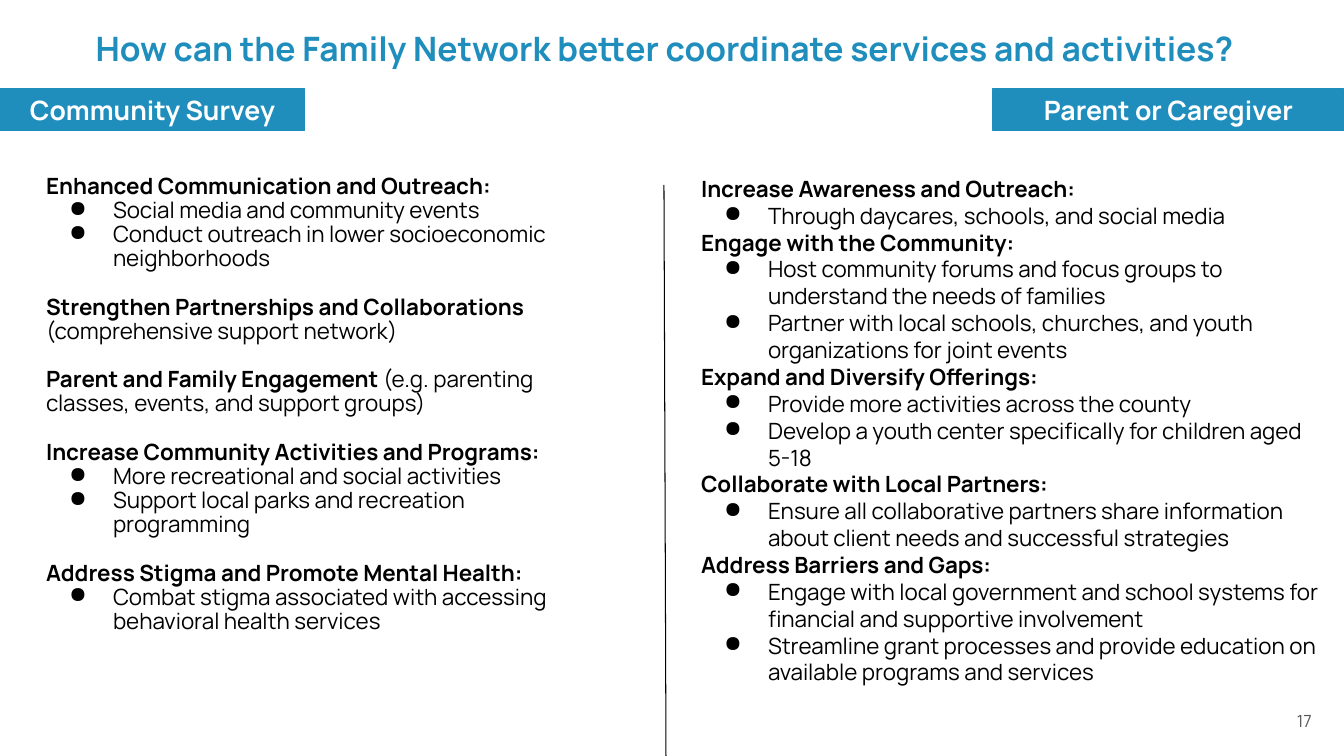
from pptx import Presentation
from pptx.dml.color import RGBColor
from pptx.enum.shapes import MSO_CONNECTOR, MSO_SHAPE
from pptx.enum.text import MSO_ANCHOR as Anchor, MSO_AUTO_SIZE as AutoSize, PP_ALIGN as Align
from pptx.oxml.ns import qn
from pptx.util import Pt
from lxml.etree import SubElement

BLUE = RGBColor(0x1F, 0x8E, 0xBD)
BLACK = RGBColor(0, 0, 0)
WHITE = RGBColor(0xFF, 0xFF, 0xFF)
GREY = RGBColor(0x58, 0x59, 0x59)
FONT = "Manrope"
EMU_PER_PX = 914400 / 100.8
TITLE_ONLY = 5

# Each topic: bold heading, plain text after it, bullets
SURVEY_TOPICS = [
    ("Enhanced Communication and Outreach:", "",
     ["Social media and community events",
      "Conduct outreach in lower socioeconomic neighborhoods"]),
    ("Strengthen Partnerships and Collaborations ", "(comprehensive support network)", []),
    ("Parent and Family Engagement ",
     "(e.g. parenting classes, events, and support groups)", []),
    ("Increase Community Activities and Programs:", "",
     ["More recreational and social activities",
      "Support local parks and recreation programming"]),
    ("Address Stigma and Promote Mental Health:", "",
     ["Combat stigma associated with accessing behavioral health services"]),
]
CAREGIVER_TOPICS = [
    ("Increase Awareness and Outreach:", "",
     ["Through daycares, schools, and social media"]),
    ("Engage with the Community:", "",
     ["Host community forums and focus groups to understand the needs of families",
      "Partner with local schools, churches, and youth organizations for joint events"]),
    ("Expand and Diversify Offerings:", "",
     ["Provide more activities across the county",
      "Develop a youth center specifically for children aged 5-18"]),
    ("Collaborate with Local Partners:", "",
     ["Ensure all collaborative partners share information about client needs"
      " and successful strategies"]),
    ("Address Barriers and Gaps:", "",
     ["Engage with local government and school systems for financial"
      " and supportive involvement",
      "Streamline grant processes and provide education on available programs"
      " and services"]),
]


def px(length):
    return round(length * EMU_PER_PX)


def set_frame(frame, side, top, anchor=Anchor.TOP):
    """Set the wrapping, anchor and insets of a text frame."""
    frame.word_wrap = True
    frame.auto_size = AutoSize.NONE
    frame.vertical_anchor = anchor
    frame.margin_left = frame.margin_right = px(side)
    frame.margin_top = frame.margin_bottom = px(top)


def add_span(para, text, size=16, color=BLACK, bold=False, align=None):
    span = para.add_run()
    span.text = text
    span.font.name = FONT
    span.font.size = Pt(size)
    span.font.bold = bold
    span.font.color.rgb = color
    if align is not None:
        para.alignment = align


def add_bullet(para):
    props = para._p.get_or_add_pPr()
    props.set("marL", str(px(67)))
    props.set("indent", str(px(-44)))
    color = SubElement(props, qn("a:buClr"))
    SubElement(color, qn("a:srgbClr"), val=str(BLACK))
    SubElement(props, qn("a:buChar"), char="●")


def place_title(page, left, top, width, height):
    title = page.shapes.title
    title.left, title.top, title.width, title.height = map(px, (left, top, width, height))
    set_frame(title.text_frame, 0, 1)
    add_span(title.text_frame.paragraphs[0],
             "How can the Family Network better coordinate services and activities?",
             size=24, color=BLUE, bold=True, align=Align.CENTER)


def add_banner(page, text, left, top, width, height):
    banner = page.shapes.add_shape(MSO_SHAPE.RECTANGLE, *map(px, (left, top, width, height)))
    banner.shadow.inherit = False
    banner.fill.solid()
    banner.fill.fore_color.rgb = BLUE
    banner.line.color.rgb = BLUE
    banner.line.width = Pt(0.75)
    set_frame(banner.text_frame, 10, 5)
    add_span(banner.text_frame.paragraphs[0], text,
             size=19, color=WHITE, bold=True, align=Align.CENTER)


def add_topics(page, topics, left, top, width, height, line_spacing=1.0, gap=0):
    """Fill a column with topics; gap is the space in points between them."""
    box = page.shapes.add_textbox(*map(px, (left, top, width, height)))
    frame = box.text_frame
    set_frame(frame, 13, 13)
    for index, (heading, detail, bullets) in enumerate(topics):
        para = frame.add_paragraph() if index else frame.paragraphs[0]
        para.line_spacing = line_spacing
        if index and gap:
            para.space_before = Pt(gap)
        add_span(para, heading, bold=True)
        if detail:
            add_span(para, detail)
        for bullet in bullets:
            para = frame.add_paragraph()
            add_bullet(para)
            para.line_spacing = line_spacing
            add_span(para, bullet)


def add_divider(page, *ends):
    divider = page.shapes.add_connector(MSO_CONNECTOR.STRAIGHT, *map(px, ends))
    divider.line.color.rgb = BLACK
    divider.line.width = Pt(0.75)
    SubElement(divider._element.spPr, qn("a:effectLst"))


def add_page_number(page, left, top, width, height):
    box = page.shapes.add_textbox(*map(px, (left, top, width, height)))
    set_frame(box.text_frame, 10, 5, Anchor.MIDDLE)
    add_span(box.text_frame.paragraphs[0], "17", size=12, color=GREY, align=Align.RIGHT)


def main():
    deck = Presentation()
    deck.slide_width, deck.slide_height = px(1344), px(756)
    page = deck.slides.add_slide(deck.slide_layouts[TITLE_ONLY])
    place_title(page, 11, 27, 1307, 50)
    add_topics(page, SURVEY_TOPICS, 33, 162, 578, 513, line_spacing=0.9, gap=17.25)
    add_banner(page, "Community Survey", 0, 89, 305, 42)
    add_banner(page, "Parent or Caregiver", 993, 89, 351, 42)
    add_divider(page, 664, 185, 666, 756)
    add_topics(page, CAREGIVER_TOPICS, 688, 162, 647, 592)
    add_page_number(page, 1020, 701, 302, 40)
    deck.save("out.pptx")


if __name__ == "__main__":
    main()
